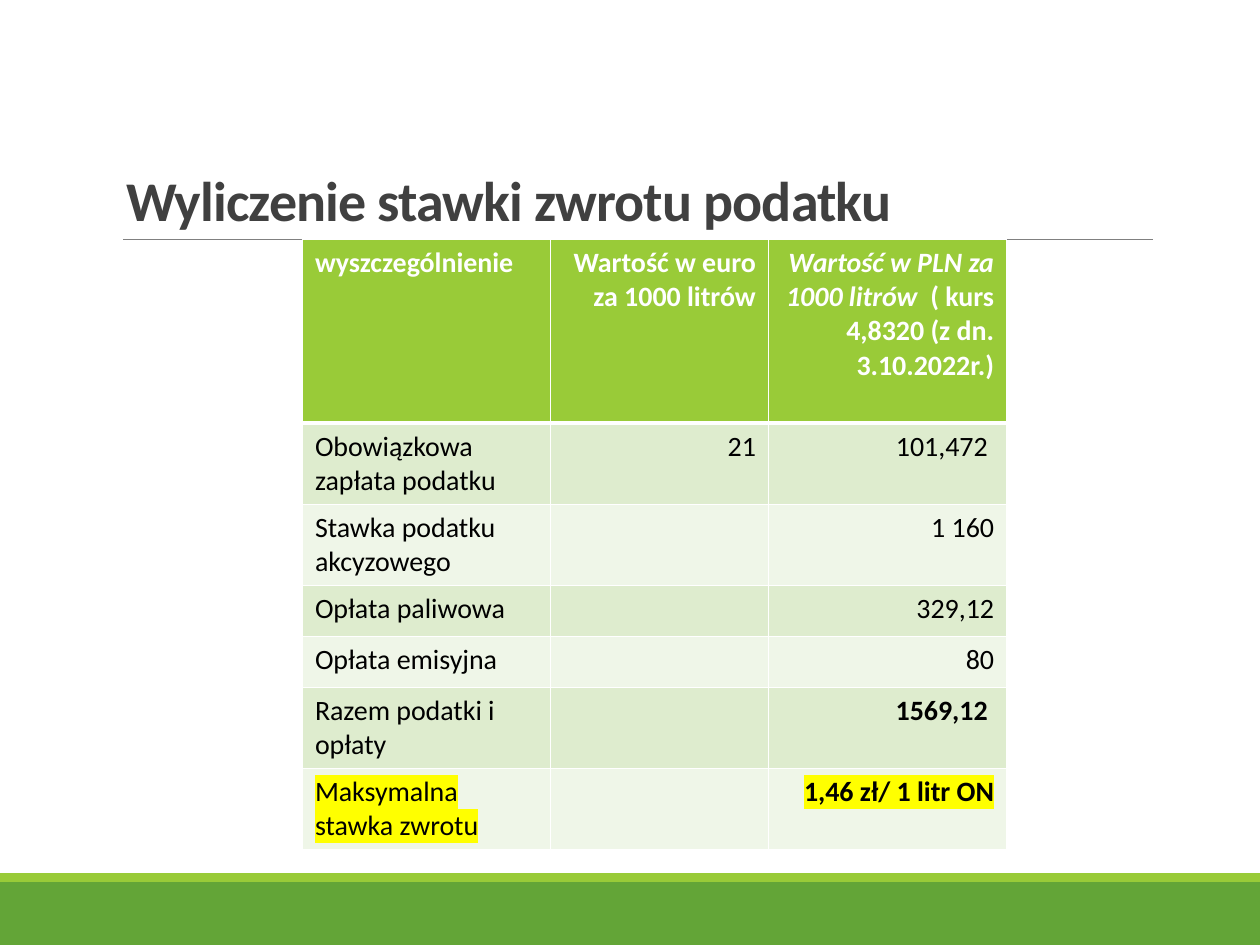
from dataclasses import dataclass

from pptx import Presentation
from pptx.dml.color import RGBColor
from pptx.enum.shapes import MSO_CONNECTOR, MSO_SHAPE
from pptx.enum.text import MSO_ANCHOR, PP_ALIGN
from pptx.oxml.ns import qn
from pptx.oxml.xmlchemy import OxmlElement
from pptx.util import Pt

RECT, STRAIGHT = MSO_SHAPE.RECTANGLE, MSO_CONNECTOR.STRAIGHT
LEFT, RIGHT = PP_ALIGN.LEFT, PP_ALIGN.RIGHT
BOTTOM = MSO_ANCHOR.BOTTOM
TITLE_ONLY = 5


@dataclass(frozen=True)
class Theme:
    font: str = "Calibri"
    title_size: float = 32
    table_size: float = 16
    empty_size: float = 18
    title: str = "404040"
    text: str = "000000"
    white: str = "FFFFFF"
    rule: str = "808080"
    dark_green: str = "63A537"
    green: str = "99CB38"
    bands: tuple = ("DEECCE", "EFF6E8")
    marker: str = "FFFF00"


def rgb(value):
    return RGBColor.from_string(value)


def add_text(p, text, *, font, size, color, bold=False, italic=False, marker=None, spacing=None):
    r = p.add_run()
    r.text = text
    f = r.font
    f.name, f.size, f.bold, f.italic = font, Pt(size), bold, italic
    f.color.rgb = rgb(color)
    rpr = r._r.get_or_add_rPr()
    if spacing is not None:
        rpr.set("spc", str(round(spacing * 100)))
    if marker:
        highlight = OxmlElement("a:highlight")
        clr = OxmlElement("a:srgbClr")
        clr.set("val", marker)
        highlight.append(clr)
        rpr.find(qn("a:solidFill")).addnext(highlight)


def add_borders(cell, color, widths):
    tc_pr = cell._tc.get_or_add_tcPr()
    for side, width in zip("LRTB", widths):
        ln = OxmlElement(f"a:ln{side}")
        ln.set("w", str(Pt(width)))
        fill = OxmlElement("a:solidFill")
        clr = OxmlElement("a:srgbClr")
        clr.set("val", color)
        fill.append(clr)
        ln.append(fill)
        tc_pr.append(ln)


class SlideBuilder:
    def __init__(self, s, theme):
        self.s, self.theme = s, theme

    def title(self, text, left, top, width, height):
        t = self.theme
        sp = self.s.shapes.title
        sp.left, sp.top, sp.width, sp.height = Pt(left), Pt(top), Pt(width), Pt(height)
        tf = sp.text_frame
        tf.word_wrap, tf.vertical_anchor = True, BOTTOM
        p = tf.paragraphs[0]
        p.alignment, p.line_spacing = LEFT, 0.85
        add_text(p, text, font=t.font, size=t.title_size, color=t.title, bold=True, spacing=-0.5)

    def band(self, left, top, width, height, color):
        sp = self.s.shapes.add_shape(RECT, Pt(left), Pt(top), Pt(width), Pt(height))
        sp.shadow.inherit = False
        sp.fill.solid()
        sp.fill.fore_color.rgb = rgb(color)
        sp.line.fill.background()

    def rule(self, left, right, y):
        cxn = self.s.shapes.add_connector(STRAIGHT, Pt(left), Pt(y), Pt(right), Pt(y))
        cxn.line.color.rgb = rgb(self.theme.rule)
        cxn.line.width = Pt(0.5)
        cxn._element.spPr.append(OxmlElement("a:effectLst"))

    def table(self, rows, left, top, widths, heights):
        frame = self.s.shapes.add_table(len(rows), len(widths), Pt(left), Pt(top),
                                        Pt(sum(widths)), Pt(sum(heights)))
        table = frame.table
        for column, width in zip(table.columns, widths):
            column.width = Pt(width)
        for i, (row, height) in enumerate(zip(rows, heights)):
            table.rows[i].height = Pt(height)
            for j, runs in enumerate(row):
                self.cell(table.cell(i, j), runs, i, j)

    def cell(self, cell, runs, row, column):
        t = self.theme
        header = row == 0
        add_borders(cell, t.white, (1, 1, 3 if row == 1 else 1, 3 if header else 1))
        cell.fill.solid()
        cell.fill.fore_color.rgb = rgb(t.green if header else t.bands[(row - 1) % 2])
        p = cell.text_frame.paragraphs[0]
        p.alignment = RIGHT if column else LEFT
        if not runs:
            p.font.size = Pt(t.empty_size)
        for text, style in runs:
            base = {"font": t.font, "size": t.table_size, "bold": header,
                    "color": t.white if header else t.text}
            add_text(p, text, **(base | style))


def main():
    theme = Theme()
    prs = Presentation()
    prs.slide_width, prs.slide_height = Pt(720), Pt(540)
    slide = SlideBuilder(prs.slides.add_slide(prs.slide_layouts[TITLE_ONLY]), theme)

    slide.band(0, 504, 720, 36, theme.dark_green)
    slide.band(0, 499, 720, 5, theme.green)
    slide.rule(70.5, 659, 136.8)
    slide.title("Wyliczenie stawki zwrotu podatku", 64.8, 22.3, 594, 114.5)

    bold = {"bold": True}
    marked = {"marker": theme.marker}
    rows = [
        [[("wyszczególnienie", {})],
         [("Wartość w euro za 1000 litrów", {})],
         [("Wartość w PLN za 1000 litrów  ", {"italic": True}),
          ("( kurs 4,8320 (z dn. 3.10.2022r.)", {})]],
        [[("Obowiązkowa zapłata podatku", {})], [("21", {})], [("101,472 ", {})]],
        [[("Stawka podatku akcyzowego", {})], [], [("1 160", {})]],
        [[("Opłata paliwowa", {})], [], [("329,12", {})]],
        [[("Opłata emisyjna", {})], [], [("80", {})]],
        [[("Razem podatki i opłaty", {})], [], [("1569,12 ", bold)]],
        [[("Maksymalna stawka zwrotu", marked)], [], [("1,46 zł/ 1 litr ON", bold | marked)]],
    ]
    one_line, two_lines = 29.2, 46.3
    heights = [105, two_lines, two_lines, one_line, one_line, two_lines, two_lines]
    slide.table(rows, 172.8, 136.8, (141.8, 124.6, 136.1), heights)

    prs.save("out.pptx")


if __name__ == "__main__":
    main()
